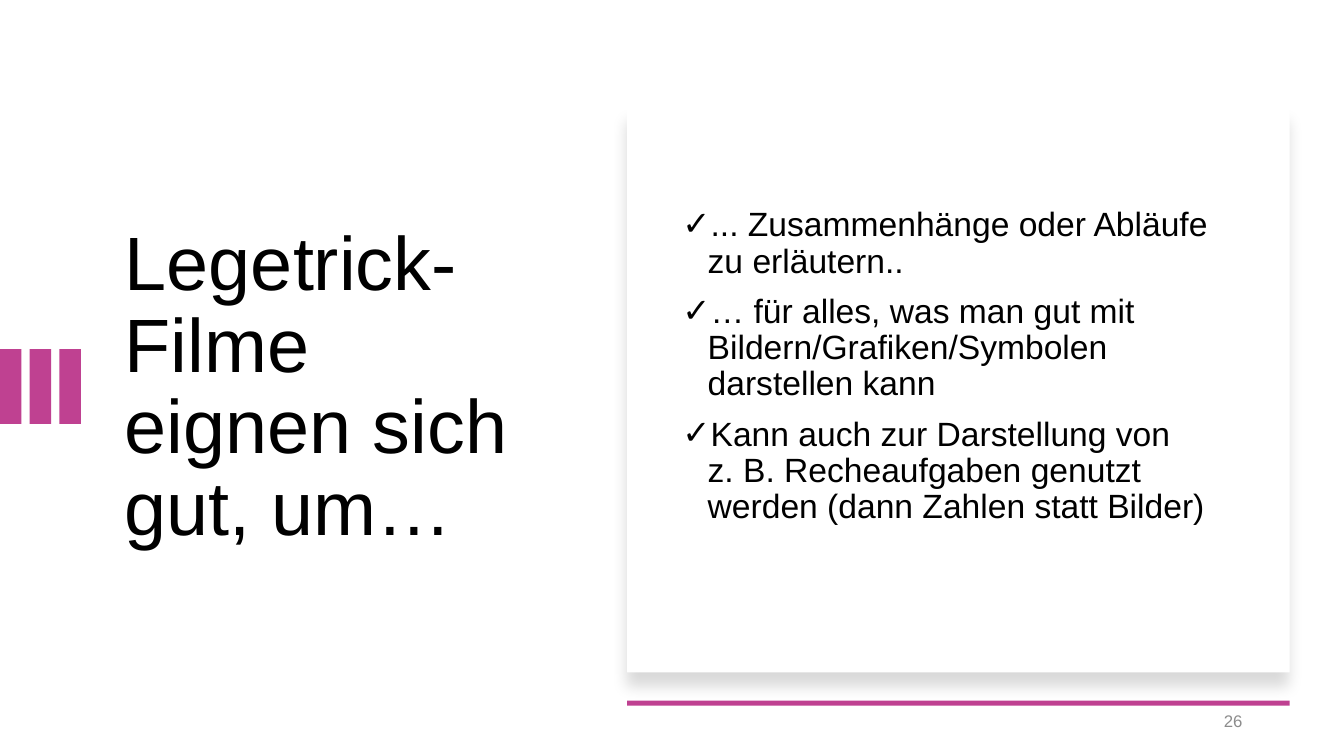
from lxml.etree import SubElement
from pptx import Presentation
from pptx.dml.color import RGBColor
from pptx.enum.shapes import MSO_SHAPE
from pptx.enum.text import MSO_ANCHOR, PP_ALIGN
from pptx.oxml.ns import qn
from pptx.util import Inches, Pt

COLORS = {"accent": "BF4191", "card": "FFFFFF", "text": "000000", "number": "8C8C8C"}
TITLE = "Legetrick-Filme eignen sich gut, um…"
USES = [
    "... Zusammenhänge oder Abläufe zu erläutern..",
    "… für alles, was man gut mit Bildern/Grafiken/Symbolen darstellen kann",
    "Kann auch zur Darstellung von\nz. B. Recheaufgaben genutzt werden (dann Zahlen statt Bilder)",
]
CARD_LEFT, CARD_WIDTH = 46.66, 49.29
CONTENT_TOP, CONTENT_HEIGHT = 20, 62.8
FOOTER_TOP = 92.67
BAR_COUNT, BAR_PITCH = 3, 2.21


class SlideBuilder:
    """Draws styled elements at places given in percent of the slide's size."""

    font = "Arial"

    def __init__(self, presentation):
        self.width = presentation.slide_width
        self.height = presentation.slide_height
        self.slide = presentation.slides.add_slide(presentation.slide_layouts[6])

    def place(self, left, top, width, height):
        return (
            round(self.width * left / 100),
            round(self.height * top / 100),
            round(self.width * width / 100),
            round(self.height * height / 100),
        )

    def rectangle(self, area, color, shapes=None):
        shapes = self.slide.shapes if shapes is None else shapes
        shape = shapes.add_shape(MSO_SHAPE.RECTANGLE, *self.place(*area))
        shape.fill.solid()
        shape.fill.fore_color.rgb = RGBColor.from_string(COLORS[color])
        shape.line.fill.background()
        shape.shadow.inherit = False
        return shape

    def card(self, area):
        shape = self.rectangle(area, "card")
        effects = shape._element.spPr.find(qn("a:effectLst"))
        shadow = SubElement(
            effects, qn("a:outerShdw"), blurRad=str(Pt(11)), dist=str(Pt(10)),
            dir="5400000", algn="t", rotWithShape="0",
        )
        color = SubElement(shadow, qn("a:srgbClr"), val=COLORS["text"])
        SubElement(color, qn("a:alpha"), val="15000")

    def bars(self, top, width, height):
        group = self.slide.shapes.add_group_shape()
        for index in range(BAR_COUNT):
            area = (index * BAR_PITCH, top, width, height)
            self.rectangle(area, "accent", group.shapes)

    def text(self, area, lines, size, color="text", align=PP_ALIGN.LEFT, spacing=0.9):
        text_frame = self.slide.shapes.add_textbox(*self.place(*area)).text_frame
        text_frame.word_wrap = True
        text_frame.vertical_anchor = MSO_ANCHOR.MIDDLE
        for index, line in enumerate(lines):
            paragraph = text_frame.add_paragraph() if index else text_frame.paragraphs[0]
            paragraph.text = line
            paragraph.alignment = align
            paragraph.line_spacing = spacing
            for run in paragraph.runs:
                run.font.name = self.font
                run.font.size = Pt(size)
                run.font.color.rgb = RGBColor.from_string(COLORS[color])
        return text_frame

    def checklist(self, area, lines, size):
        text_frame = self.text(area, lines, size)
        text_frame.margin_bottom = Inches(0.48)
        for paragraph in text_frame.paragraphs:
            paragraph.space_before = Pt(10)
            properties = paragraph._p.get_or_add_pPr()
            properties.set("marL", str(Inches(0.25)))
            properties.set("indent", str(-Inches(0.25)))
            SubElement(properties, qn("a:buFont"), typeface=self.font)
            SubElement(properties, qn("a:buChar"), char="✓")


def main():
    presentation = Presentation()
    presentation.slide_width = Inches(13.33)
    presentation.slide_height = Inches(7.5)
    builder = SlideBuilder(presentation)
    builder.text((8.55, CONTENT_TOP, 31.96, CONTENT_HEIGHT), [TITLE], 54)
    builder.bars(46.2, 1.6, 9.87)
    builder.card((CARD_LEFT, 14.27, CARD_WIDTH, 74.67))
    builder.checklist((50.04, CONTENT_TOP, 42.84, CONTENT_HEIGHT), USES, 24)
    builder.rectangle((CARD_LEFT, FOOTER_TOP, CARD_WIDTH, 0.67), "accent")
    builder.text((70.67, FOOTER_TOP, 22.51, 5.33), ["26"], 12, "number", PP_ALIGN.RIGHT, 1.0)
    presentation.save("out.pptx")


if __name__ == "__main__":
    main()
